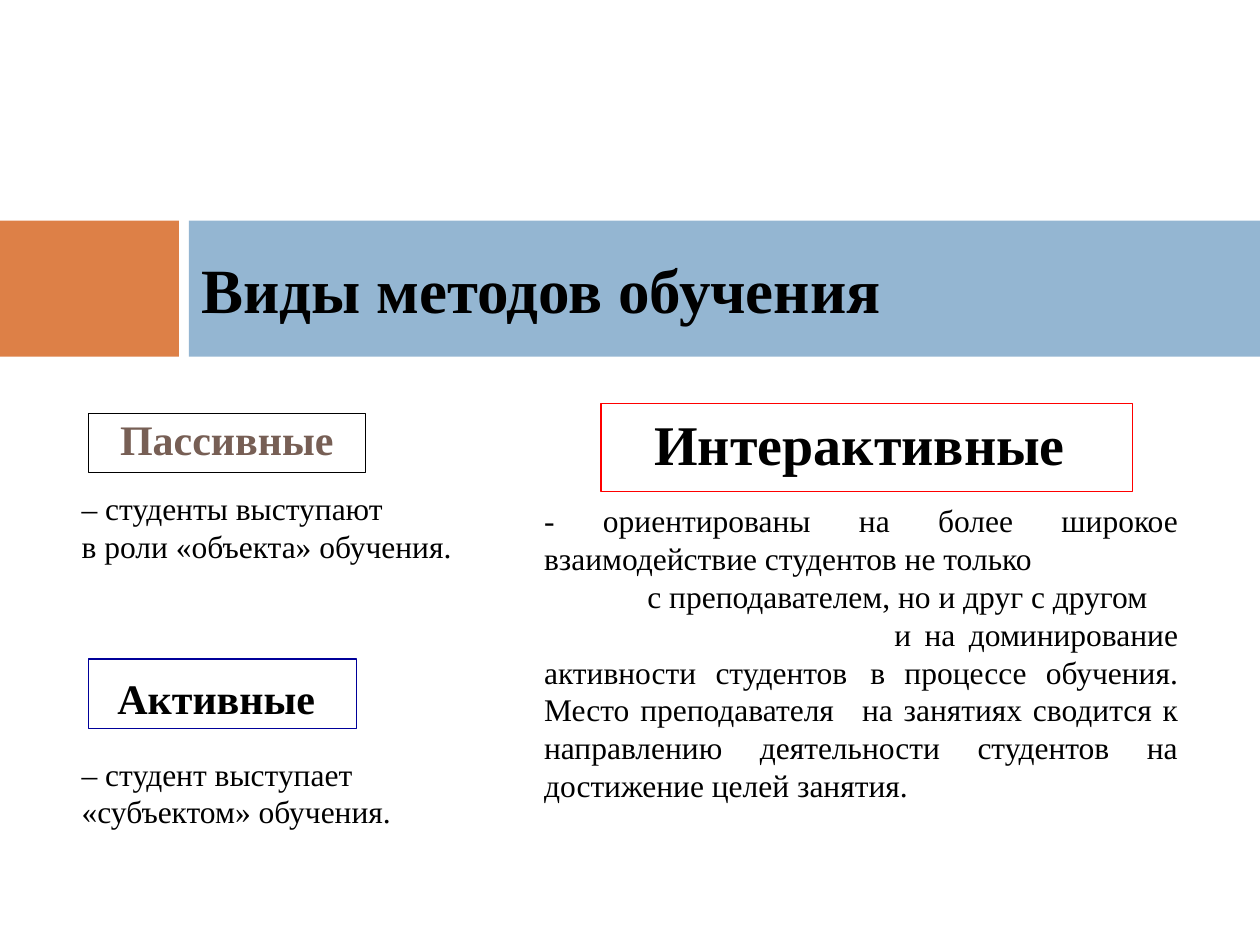
"""Build a slide that compares passive, active and interactive teaching methods."""
import pptx
import pptx.dml.color
import pptx.enum.shapes
import pptx.enum.text
import pptx.oxml
import pptx.oxml.ns
import pptx.util

Inches = pptx.util.Inches
Pt = pptx.util.Pt
RGBColor = pptx.dml.color.RGBColor
PP_ALIGN = pptx.enum.text.PP_ALIGN
MSO_ANCHOR = pptx.enum.text.MSO_ANCHOR
RECTANGLE = pptx.enum.shapes.MSO_SHAPE.RECTANGLE

ORANGE = RGBColor(0xDD, 0x80, 0x47)
BLUE = RGBColor(0x94, 0xB6, 0xD2)
BROWN = RGBColor(0x77, 0x5F, 0x55)
NAVY = RGBColor(0x00, 0x00, 0x99)
RED = RGBColor(0xFF, 0x00, 0x00)
BLACK = RGBColor(0x00, 0x00, 0x00)


def add_rectangle(left, top, width, height):
    box = page.shapes.add_shape(
        RECTANGLE, Inches(left), Inches(top), Inches(width), Inches(height))
    box.shadow.inherit = False
    return box


def write_lines(box, lines, size, bold=False, color=BLACK, align=PP_ALIGN.LEFT,
                anchor=MSO_ANCHOR.TOP):
    frame = box.text_frame
    frame.word_wrap = True
    frame.vertical_anchor = anchor
    frame.text = "\n".join(lines)
    for para in frame.paragraphs:
        para.alignment = align
        para.font.name = "Times New Roman"
        para.font.size = Pt(size)
        para.font.bold = bold
        para.font.color.rgb = color
    return frame.paragraphs


deck = pptx.Presentation()
deck.slide_width = Inches(10)
deck.slide_height = Inches(7.5)
page = deck.slides.add_slide(deck.slide_layouts[6])

for left, width, color in [(0, 1.42, ORANGE), (1.5, 8.5, BLUE)]:
    band = add_rectangle(left, 1.75, width, 1.08)
    band.fill.solid()
    band.fill.fore_color.rgb = color
    band.line.fill.background()

title = page.shapes.add_textbox(Inches(1.5), Inches(1.75), Inches(8.33), Inches(1.08))
write_lines(title, ["Виды методов обучения"], 36, bold=True, anchor=MSO_ANCHOR.MIDDLE)

headings = [
    ("Пассивные", (0.7, 3.28, 2.2, 0.47), BLACK, BROWN, 24, 7, 0),
    ("Активные", (0.7, 5.23, 2.13, 0.55), NAVY, BLACK, 24, 5, 0.38),
    ("Интерактивные ", (4.77, 3.2, 4.22, 0.7), RED, BLACK, 32, 6, 0.38),
]
for text, place, outline, color, size, before, hanging in headings:
    box = add_rectangle(*place)
    box.fill.background()
    box.line.color.rgb = outline
    box.line.width = Pt(0.75)
    para = write_lines(box, [text], size, True, color, PP_ALIGN.CENTER)[0]
    para.space_before = Pt(before)
    if hanging:
        properties = para._p.get_or_add_pPr()
        properties.set("marL", str(Inches(hanging)))
        properties.set("indent", str(-Inches(hanging)))
    else:
        para.line_spacing = 0.9
    if text == "Активные":
        span = para.add_run()
        span.text = " "
        span.font.size = Pt(28)
        span.font.bold = False

notes = [
    (["– студенты выступают", "в роли «объекта» обучения."], (0.55, 3.83, 3.2, 0.71)),
    (["– студент выступает «субъектом» обучения."], (0.55, 5.94, 2.97, 1.01)),
]
for lines, place in notes:
    write_lines(page.shapes.add_textbox(*map(Inches, place)), lines, 18)

interactive = page.shapes.add_textbox(Inches(4.22), Inches(3.93), Inches(5.23), Inches(3.1))
paragraphs = write_lines(interactive, [
    "- ориентированы на более широкое взаимодействие студентов не только",
    "с преподавателем, но и друг с другом",
    "и на доминирование активности студентов\tв процессе обучения. "
    "Место преподавателя\tна занятиях сводится к направлению деятельности "
    "студентов на достижение целей занятия.",
], 18, align=PP_ALIGN.JUSTIFY)
for para, indent in zip(paragraphs, [0, 0.82, 2.78]):
    properties = para._p.get_or_add_pPr()
    properties.set("marL", "0")
    properties.set("indent", str(Inches(indent)))
tab_list = pptx.oxml.parse_xml(
    f'<a:tabLst {pptx.oxml.ns.nsdecls("a")}><a:tab pos="{Inches(5.02)}" algn="r"/></a:tabLst>')
properties.insert_element_before(tab_list, "a:defRPr", "a:extLst")

deck.save("out.pptx")
